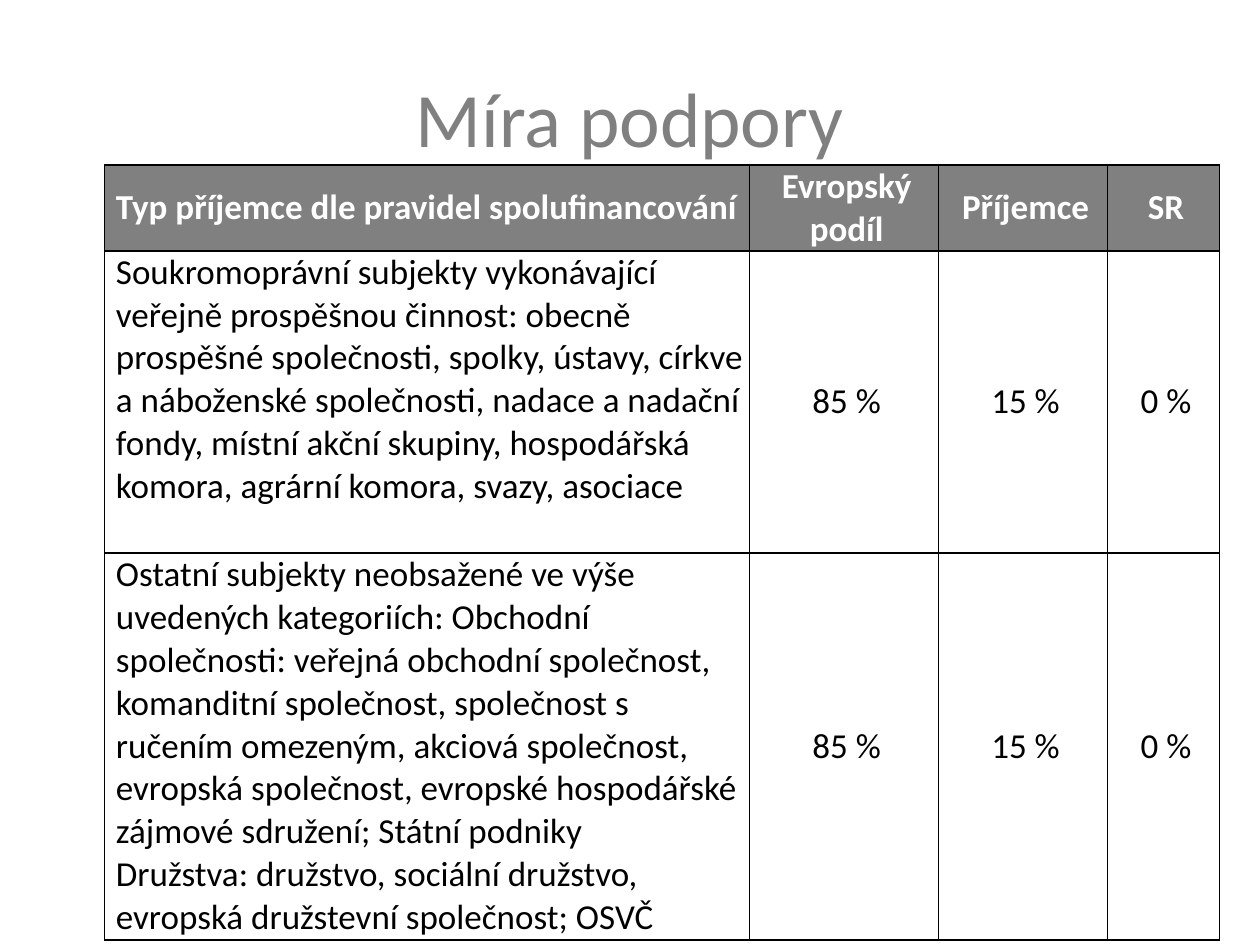
import pptx
import pptx.util
import pptx.dml.color
import pptx.enum.text
import pptx.oxml
import pptx.oxml.ns

Inches = pptx.util.Inches
Pt = pptx.util.Pt
ALIGN = pptx.enum.text.PP_ALIGN
ANCHOR = pptx.enum.text.MSO_ANCHOR

COLORS = {"gray": "808080", "white": "FFFFFF", "black": "000000"}
FONT = "Calibri"
COLUMN_WIDTHS = [5.12, 1.5, 1.34, 0.89]
ROW_HEIGHTS = [0.68, 2.4, 3.07]
SHARES = ["85 %", "15 %", "0 %"]
ROWS = [
    ["Typ příjemce dle pravidel spolufinancování", "Evropský podíl", "Příjemce", "SR"],
    ["Soukromoprávní subjekty vykonávající veřejně prospěšnou činnost: obecně "
     "prospěšné společnosti, spolky, ústavy, církve a náboženské společnosti, "
     "nadace a nadační fondy, místní akční skupiny, hospodářská komora, "
     "agrární komora, svazy, asociace", *SHARES],
    ["Ostatní subjekty neobsažené ve výše uvedených kategoriích: Obchodní "
     "společnosti: veřejná obchodní společnost, komanditní společnost, "
     "společnost s ručením omezeným, akciová společnost, evropská společnost, "
     "evropské hospodářské zájmové sdružení; Státní podniky\n"
     "Družstva: družstvo, sociální družstvo, evropská družstevní společnost; OSVČ",
     *SHARES],
]


def rgb(name):
    """Return the named palette colour."""
    return pptx.dml.color.RGBColor.from_string(COLORS[name])


def write_text(text_frame, text, size=20, color="black", bold=False,
               align=ALIGN.LEFT, indent=0):
    """Fill a text frame with one formatted paragraph per line of text."""
    text_frame.text = text
    for paragraph in text_frame.paragraphs:
        paragraph.alignment = align
        paragraph._p.get_or_add_pPr().set("marL", str(Inches(indent)))
        font = paragraph.runs[0].font
        font.name, font.size, font.bold = FONT, Pt(size), bold
        font.color.rgb = rgb(color)


def set_borders(cell, color="black", width=1):
    """Draw a solid line on all four sides of a cell."""
    properties = cell._tc.get_or_add_tcPr()
    for index, side in enumerate("LRTB"):
        properties.insert(index, pptx.oxml.parse_xml(
            f'<a:ln{side} {pptx.oxml.ns.nsdecls("a")} w="{Pt(width)}"><a:solidFill>'
            f'<a:srgbClr val="{COLORS[color]}"/></a:solidFill></a:ln{side}>'))


def add_title(slide, left, top, width, height):
    """Place the slide title."""
    title = slide.shapes.title
    title.left, title.top = Inches(left), Inches(top)
    title.width, title.height = Inches(width), Inches(height)
    title.text_frame.vertical_anchor = ANCHOR.MIDDLE
    write_text(title.text_frame, "Míra podpory", size=44, color="gray",
               align=ALIGN.CENTER)


def format_cell(cell, text, is_header, is_label):
    """Write and style one cell of the support table."""
    cell.margin_left = cell.margin_right = Inches(0.05)
    cell.margin_top = cell.margin_bottom = 0
    is_body_label = is_label and not is_header
    cell.vertical_anchor = ANCHOR.TOP if is_body_label else ANCHOR.MIDDLE
    if is_header:
        cell.fill.solid()
        cell.fill.fore_color.rgb = rgb("gray")
    else:
        cell.fill.background()
    set_borders(cell)
    write_text(cell.text_frame, text, color="white" if is_header else "black",
               bold=is_header, indent=0.04,
               align=ALIGN.LEFT if is_label else ALIGN.CENTER)


def add_support_table(slide, left, top):
    """Add the table of co-financing shares."""
    table = slide.shapes.add_table(
        len(ROWS), len(COLUMN_WIDTHS), Inches(left), Inches(top),
        Inches(sum(COLUMN_WIDTHS)), Inches(sum(ROW_HEIGHTS))).table
    table.horz_banding = False
    for column, width in zip(table.columns, COLUMN_WIDTHS):
        column.width = Inches(width)
    for row_index, (row, height) in enumerate(zip(table.rows, ROW_HEIGHTS)):
        row.height = Inches(height)
        for column_index, text in enumerate(ROWS[row_index]):
            format_cell(row.cells[column_index], text,
                        row_index == 0, column_index == 0)


def main():
    """Build and save the presentation."""
    presentation = pptx.Presentation()
    presentation.slide_width, presentation.slide_height = Inches(10), Inches(7.5)
    slide = presentation.slides.add_slide(presentation.slide_layouts[5])
    add_title(slide, 0.5, 0.3, 9, 1.25)
    add_support_table(slide, 0.83, 1.31)
    presentation.save("out.pptx")


if __name__ == "__main__":
    main()
